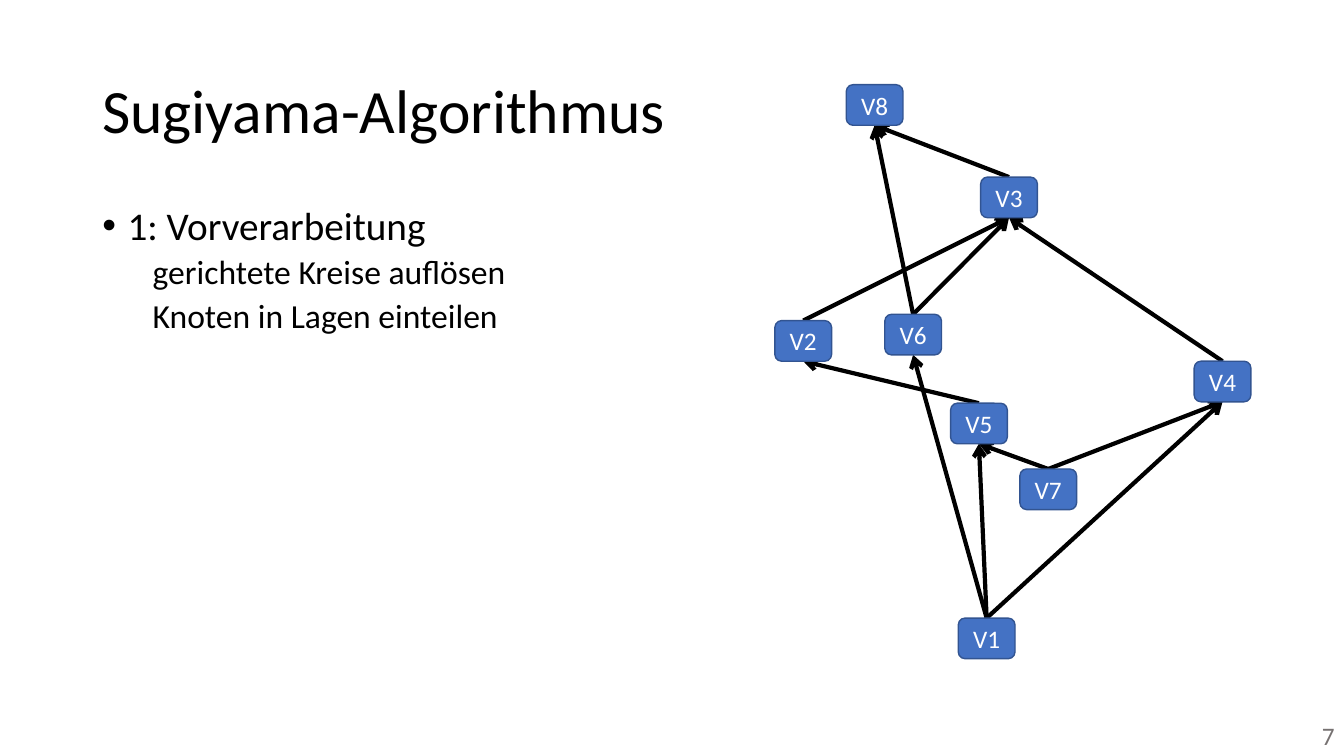
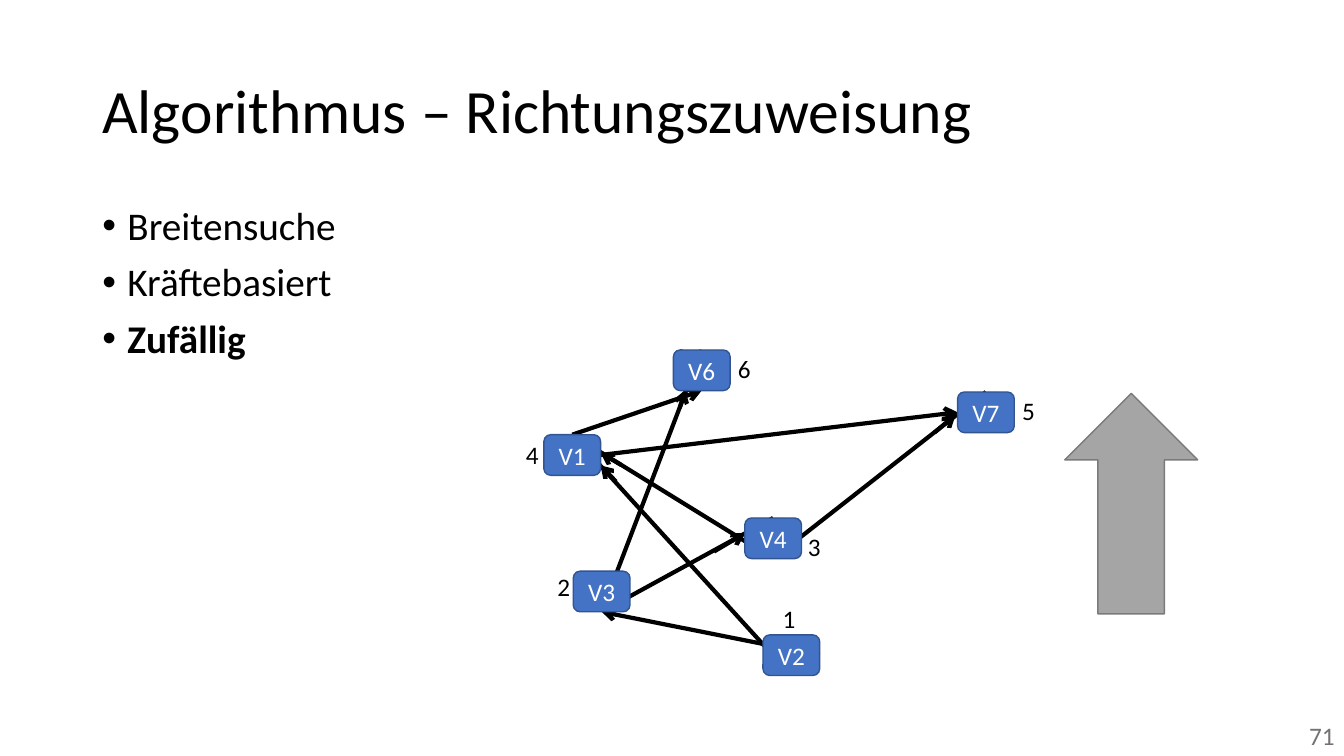
from lxml.etree import SubElement
from pptx import Presentation
from pptx.dml.color import RGBColor
from pptx.enum.shapes import MSO_CONNECTOR, MSO_SHAPE
from pptx.enum.text import MSO_ANCHOR, PP_ALIGN
from pptx.oxml.ns import qn
from pptx.util import Pt

BLACK, WHITE, BLUE, NAVY = "000000", "FFFFFF", "4472C4", "325491"
GREY, DARK, DIM = "A5A5A5", "7A7A7A", "767171"
NODE = (40.5, 29)
TOP, LEFT, BOTTOM, RIGHT = range(4)
HEAD = (66, 29, 828, 104)
PAGE = (927.5, 511, 33, 29)
TITLE = {"size": 44, "line_spacing": 0.9}
BULLET = {"size": 28, "line_spacing": 0.9, "space_before": Pt(10), "bullet": True}
DETAIL = {"size": 24, "line_spacing": 0.9, "space_before": Pt(5), "level": 1}


def color(part, code):
    """Give a fill, line or font color object a hex color."""
    part.rgb = RGBColor.from_string(code)


def setup(item, values):
    """Set each named attribute of an item."""
    for name, value in values.items():
        setattr(item, name, value)


def write(par, text, size=18, tint=BLACK, bold=False, bullet=False, **form):
    """Write one formatted paragraph."""
    setup(par, form)
    run = par.add_run()
    run.text = text
    setup(run.font, {"name": "Calibri", "size": Pt(size), "bold": bold})
    color(run.font.color, tint)
    props = par._p.get_or_add_pPr()
    if bullet:
        props.set("marL", str(Pt(18)))
        props.set("indent", str(Pt(-18)))
        SubElement(props, qn("a:buFont")).set("typeface", "Arial")
        SubElement(props, qn("a:buChar")).set("char", "•")
    elif form.get("level"):
        props.set("marL", str(Pt(36)))
        props.set("indent", "0")


def label(slide, box, rows, anchor=MSO_ANCHOR.TOP, wrap=True):
    """Add a text box with rows of (text, format)."""
    frame = slide.shapes.add_textbox(*map(Pt, box)).text_frame
    setup(frame, {"word_wrap": wrap, "vertical_anchor": anchor})
    for i, (text, form) in enumerate(rows):
        write(frame.add_paragraph() if i else frame.paragraphs[0], text, **form)


def block(slide, kind, box, fill, edge):
    """Add a filled, outlined shape."""
    shape = slide.shapes.add_shape(kind, *map(Pt, box))
    shape.shadow.inherit = False
    shape.fill.solid()
    color(shape.fill.fore_color, fill)
    color(shape.line.color, edge)
    shape.line.width = Pt(1)
    return shape


def arrow(slide, *ends):
    """Add a straight black arrow between two points."""
    line = slide.shapes.add_connector(MSO_CONNECTOR.STRAIGHT, *map(Pt, ends))
    color(line.line.color, BLACK)
    line.line.width = Pt(3)
    SubElement(line.line._get_or_add_ln(), qn("a:tailEnd")).set("type", "arrow")
    SubElement(line._element.spPr, qn("a:effectLst"))
    return line


def graph(slide, box, nodes, edges, strokes=(), marks=()):
    """Draw nodes over their edges, with loose strokes and rank marks."""
    left, top = box
    lines = [arrow(slide, 0, 0, 0, 0) for _ in edges]
    for x1, y1, x2, y2 in strokes:
        arrow(slide, left + x1, top + y1, left + x2, top + y2)
    for rank, x, y in marks:
        label(slide, (left + x, top + y, 24.5, 29), [(rank, {})])
    made = {}
    for name, (x, y) in nodes.items():
        place = (left + x, top + y, *NODE)
        shape = block(slide, MSO_SHAPE.ROUNDED_RECTANGLE, place, BLUE, NAVY)
        shape.text_frame.vertical_anchor = MSO_ANCHOR.MIDDLE
        write(shape.text_frame.paragraphs[0], f"V{name}", tint=WHITE,
              alignment=PP_ALIGN.CENTER)
        made[name] = shape
    for line, (start, end, *sites) in zip(lines, edges):
        out, into = sites or (TOP, BOTTOM)
        line.begin_connect(made[start], out)
        line.end_connect(made[end], into)


def base(deck, title, number, rows, width):
    """Start a slide with its title, body and page number."""
    slide = deck.slides.add_slide(deck.slide_layouts[6])
    label(slide, HEAD, [(title, TITLE)], MSO_ANCHOR.MIDDLE)
    label(slide, (66, 144, width, 343), rows)
    form = {"tint": DIM, "alignment": PP_ALIGN.RIGHT}
    label(slide, PAGE, [(number, form)], wrap=False)
    return slide


def layers(deck):
    """Build the slide on preparing the layers."""
    rows = [("1: Vorverarbeitung", BULLET),
            ("gerichtete Kreise auflösen", DETAIL),
            ("Knoten in Lagen einteilen", DETAIL)]
    slide = base(deck, "Sugiyama-Algorithmus", "7", rows, 470)
    nodes = {1: (131.5, 381.5), 2: (0.5, 169), 3: (147.5, 66.5),
             4: (300, 198), 5: (126, 228), 6: (79, 164.5),
             7: (175.5, 275), 8: (51.5, 0.5)}
    edges = [(1, 5), (1, 4), (5, 2), (1, 6), (2, 3), (7, 5),
             (7, 4), (4, 3), (3, 8), (6, 8), (6, 3)]
    graph(slide, (553, 60), nodes, edges)


def ranks(deck):
    """Build the slide on giving edges a direction."""
    rows = [("Breitensuche", BULLET), ("Kräftebasiert", BULLET),
            ("Zufällig", {**BULLET, "bold": True})]
    slide = base(deck, "Algorithmus – Richtungszuweisung", "71", rows, 407)
    nodes = {1: (20.5, 60.5), 2: (177, 203.5), 3: (41.5, 158),
             4: (164, 120), 6: (113, 0), 7: (316, 30)}
    edges = [(1, 2), (1, 4), (1, 6), (2, 3, RIGHT, BOTTOM),
             (1, 7, RIGHT, LEFT), (7, 4), (4, 3), (6, 3)]
    strokes = [(299.5, 59, 314.5, 46.5), (142, 144, 164, 131),
               (75.5, 82, 61, 73.5), (72, 94, 61, 82.5),
               (117.5, 41.5, 121.5, 28.5)]
    marks = [("1", 184, 177.5), ("2", 23, 154.5), ("3", 202, 126),
             ("4", 0.5, 60.5), ("6", 152, -1), ("5", 355, 28.5)]
    graph(slide, (368, 250), nodes, edges, strokes, marks)
    block(slide, MSO_SHAPE.UP_ARROW, (760.5, 281, 95, 157.5), GREY, DARK)


def main():
    """Build and save the deck."""
    deck = Presentation()
    setup(deck, {"slide_width": Pt(960), "slide_height": Pt(540)})
    layers(deck)
    ranks(deck)
    deck.save("out.pptx")


if __name__ == "__main__":
    main()
